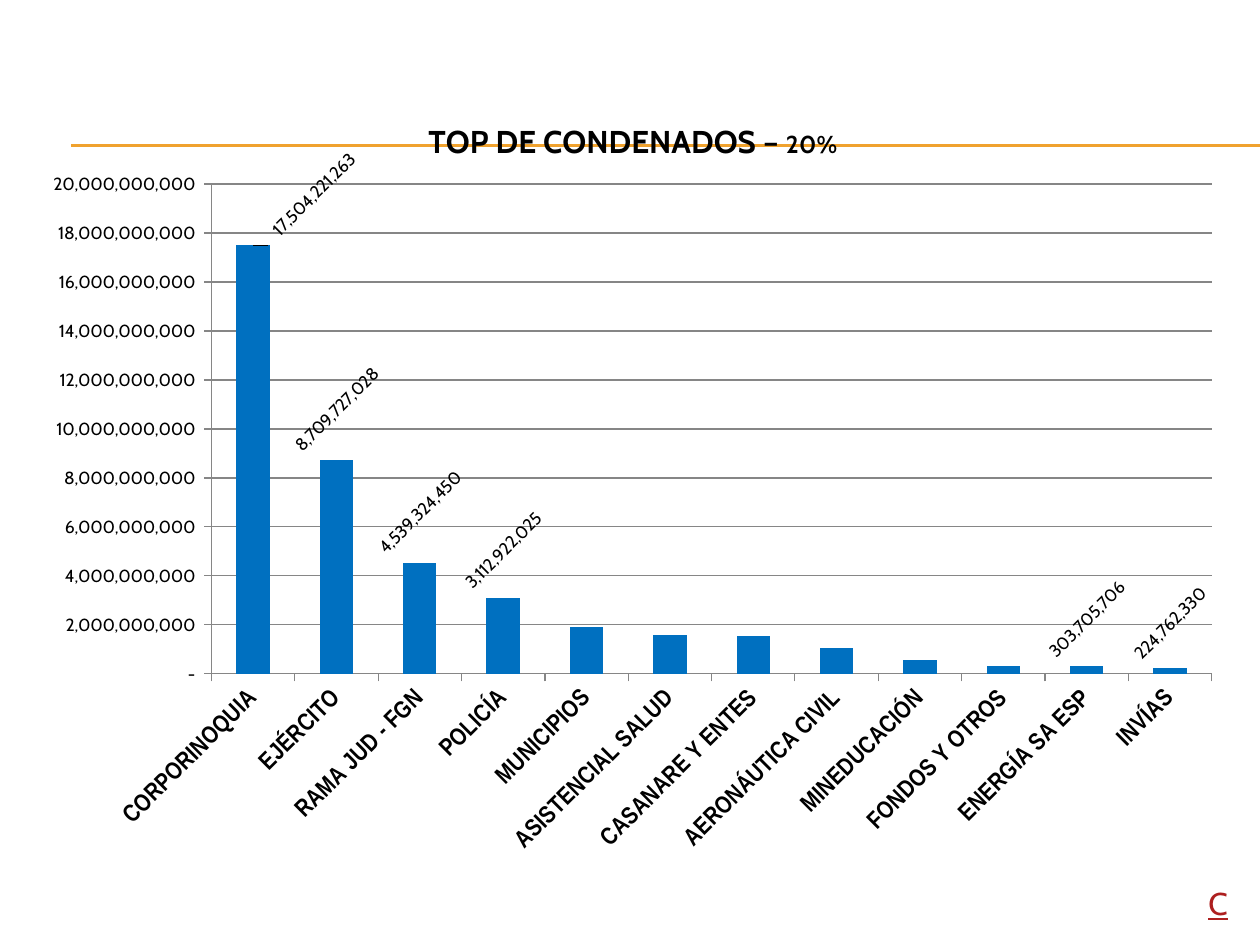
from lxml.etree import SubElement
from pptx import Presentation
from pptx.chart.data import CategoryChartData
from pptx.dml.color import RGBColor
from pptx.enum.chart import XL_CHART_TYPE, XL_LABEL_POSITION, XL_TICK_MARK
from pptx.enum.shapes import MSO_CONNECTOR
from pptx.oxml import parse_xml
from pptx.oxml.ns import nsdecls, qn
from pptx.util import Emu, Pt

PX = 914400 // 126
BLACK = RGBColor(0x00, 0x00, 0x00)
GRAY = RGBColor(0x86, 0x86, 0x86)
BLUE = RGBColor(0x00, 0x70, 0xC0)
AMBER = RGBColor(0xF0, 0xA2, 0x2E)
RED = RGBColor(0xAD, 0x1F, 0x1F)
BODY_FONT = "Cabin"
CATEGORY_FONT = "Arial Narrow"
SLANT = "-2700000"
AMOUNT_FORMAT = '_(* #,##0_);_(* \\(#,##0\\);_(* "-"_);_(@_)'

SENTENCES = {
    "CORPORINOQUIA": 17504221263,
    "EJÉRCITO": 8709727028,
    "RAMA JUD - FGN": 4539324450,
    "POLICÍA": 3112922025,
    "MUNICIPIOS": 1920000000,
    "ASISTENCIAL SALUD": 1580000000,
    "CASANARE Y ENTES": 1540000000,
    "AERONÁUTICA CIVIL": 1040000000,
    "MINEDUCACIÓN": 550000000,
    "FONDOS Y OTROS": 330000000,
    "ENERGÍA SA ESP": 303705706,
    "INVÍAS": 224762330,
}
LABELLED = (0, 1, 2, 3, 10, 11)


def px(length):
    """Turn pixels into EMU."""
    return Emu(length * PX)


def style(font, size, name=BODY_FONT, color=BLACK, bold=False):
    """Set the look of a font."""
    font.size, font.name, font.bold = Pt(size), name, bold
    font.color.rgb = color


def set_layout(parent, index, **fractions):
    """Give a chart part a manual layout as fractions of the chart."""
    for old in parent.findall(qn("c:layout")):
        parent.remove(old)
    layout = parse_xml(f"<c:layout {nsdecls('c')}><c:manualLayout/></c:layout>")
    for tag, value in fractions.items():
        SubElement(layout[0], qn(f"c:{tag}")).set("val", str(value))
    parent.insert(index, layout)


def slant(element):
    """Turn the text of a chart part up by 45 degrees."""
    for body in element.iter(qn("a:bodyPr")):
        body.set("rot", SLANT)
        body.set("vert", "horz")


def add_header_rule(slide, left, top, width):
    """Draw the double amber rule under the header."""
    for y in (top, top + 1):
        rule = slide.shapes.add_connector(
            MSO_CONNECTOR.STRAIGHT, px(left), px(y), px(left + width), px(y))
        rule.line.color.rgb = AMBER
        rule.line.width = Pt(0.75)
        SubElement(rule._element.spPr, qn("a:effectLst"))


def format_title(chart):
    """Write the chart title with its smaller percentage."""
    chart.has_title = True
    title = chart.chart_title
    paragraph = title.text_frame.paragraphs[0]
    for text, size in (("TOP DE CONDENADOS – ", 18), ("20%", 14)):
        run = paragraph.add_run()
        run.text = text
        style(run.font, size, bold=True)
    set_layout(title._element, 1, xMode="edge", yMode="edge", x=0.33, y=0.04)


def format_axes(chart):
    """Style both axes and the gridlines."""
    categories, amounts = chart.category_axis, chart.value_axis
    for axis in (categories, amounts):
        axis.major_tick_mark = XL_TICK_MARK.OUTSIDE
        axis.minor_tick_mark = XL_TICK_MARK.NONE
        axis.format.line.color.rgb = GRAY
    style(categories.tick_labels.font, 14, CATEGORY_FONT, bold=True)
    slant(categories._element)
    style(amounts.tick_labels.font, 10)
    amounts.tick_labels.number_format = AMOUNT_FORMAT
    amounts.tick_labels.number_format_is_linked = False
    amounts.minimum_scale, amounts.maximum_scale = 0, 20_000_000_000
    amounts.major_unit = 2_000_000_000
    amounts.has_major_gridlines = True
    amounts.major_gridlines.format.line.color.rgb = GRAY


def format_columns(plot):
    """Colour the columns and label the chosen ones."""
    plot.gap_width = 150
    plot.vary_by_categories = False
    series = plot.series[0]
    series.format.fill.solid()
    series.format.fill.fore_color.rgb = BLUE
    series.data_labels.show_value = False
    for index in LABELLED:
        label = series.points[index].data_label
        style(label.font, 10)
        label.position = XL_LABEL_POSITION.OUTSIDE_END
    labels = series._element.findall(f".//{qn('c:dLbl')}")
    for label in labels:
        slant(label)
    set_layout(labels[0], 1, x=0.05, y=0)


def add_sentence_chart(slide, left, top, width, height):
    """Add the column chart of sentenced entities."""
    data = CategoryChartData(number_format="#,##0")
    data.categories = list(SENTENCES)
    data.add_series("Series 1", list(SENTENCES.values()))
    chart = slide.shapes.add_chart(
        XL_CHART_TYPE.COLUMN_CLUSTERED,
        px(left), px(top), px(width), px(height), data).chart
    style(chart.font, 10)
    chart.has_legend = False
    format_title(chart)
    format_axes(chart)
    format_columns(chart.plots[0])
    plot_area = chart._chartSpace.find(f".//{qn('c:plotArea')}")
    set_layout(plot_area, 0, layoutTarget="inner", xMode="edge", yMode="edge",
               x=0.154, y=0.125, w=0.826, h=0.625)


def add_corner_mark(slide, left, top, width, height):
    """Write the underlined letter in the corner."""
    mark = slide.shapes.add_textbox(px(left), px(top), px(width), px(height))
    mark.text_frame.word_wrap = False
    mark.text_frame.text = "C"
    font = mark.text_frame.paragraphs[0].runs[0].font
    style(font, 18, color=RED)
    font.underline = True


def main():
    """Build and save the slide."""
    deck = Presentation()
    deck.slide_width, deck.slide_height = px(1260), px(945)
    slide = deck.slides.add_slide(deck.slide_layouts[6])
    add_header_rule(slide, 71, 145, 1189)
    add_sentence_chart(slide, 25, 86, 1211, 784)
    add_corner_mark(slide, 1196, 878, 48, 50)
    deck.save("out.pptx")


if __name__ == "__main__":
    main()
